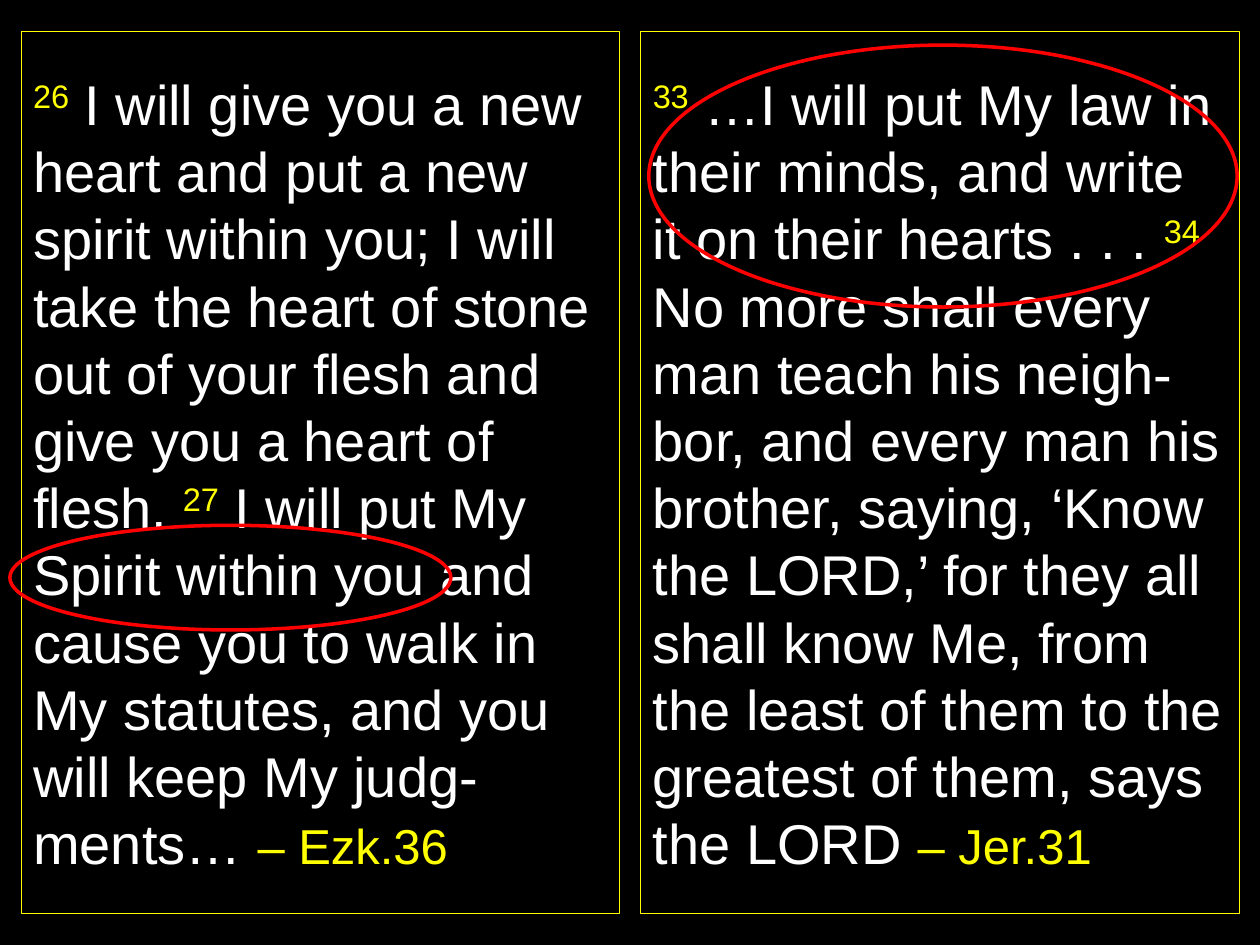
from pptx import Presentation
from pptx.dml.color import RGBColor
from pptx.enum.shapes import MSO_SHAPE
from pptx.enum.text import MSO_ANCHOR, PP_ALIGN
from pptx.util import Cm, Pt

COLORS = {"black": "000000", "white": "FFFFFF", "yellow": "FFFF00", "red": "FF0000"}

FORMATS = {
    "verse": {"size": Pt(32), "color": "yellow", "baseline": 30000},
    "body": {"size": Pt(32), "color": "white"},
    "reference": {"size": Pt(28), "color": "yellow"},
}

PASSAGES = [
    [
        ("verse", "26"),
        ("body", " I will give you a new heart and put a new spirit within you; "
                 "I will take the heart of stone out of your flesh and give you "
                 "a heart of flesh. "),
        ("verse", "27"),
        ("body", " I will put My Spirit within you and cause you to walk in "
                 "My statutes, and you will keep My judg-ments… "),
        ("reference", "– Ezk.36"),
    ],
    [
        ("verse", "33"),
        ("body", " …I will put My law in their minds, and write it on their hearts . . . "),
        ("verse", "34"),
        ("body", " No more shall every man teach his neigh-bor, and every man his "
                 "brother, saying, ‘Know the LORD,’ for they all shall know Me, from "
                 "the least of them to the greatest of them, says the LORD "),
        ("reference", "– Jer.31"),
    ],
]

HIGHLIGHTS = [(0.2, 10.59, 8.89, 2.11), (13.08, 0.91, 11.86, 5.28)]


class ScriptureSlide:
    font_name = "Arial"
    margin, top = 0.42, 0.64
    panel_width, panel_height = 12.07, 17.78

    def __init__(self, presentation):
        self.slide = presentation.slides.add_slide(presentation.slide_layouts[6])
        self.fill(self.slide.background.fill, "black")

    def color(self, name):
        return RGBColor.from_string(COLORS[name])

    def fill(self, fill, name):
        fill.solid()
        fill.fore_color.rgb = self.color(name)

    def outline(self, kind, box, color, width):
        shape = self.slide.shapes.add_shape(kind, *map(Cm, box))
        shape.shadow.inherit = False
        shape.line.color.rgb = self.color(color)
        shape.line.width = Pt(width)
        return shape

    def run(self, paragraph, text, size, color, baseline=None):
        run = paragraph.add_run()
        run.text = text
        for name, value in {"name": self.font_name, "size": size}.items():
            setattr(run.font, name, value)
        run.font.color.rgb = self.color(color)
        if baseline:
            run._r.get_or_add_rPr().set("baseline", str(baseline))

    def panel(self, column, passage):
        left = self.margin + column * (self.panel_width + self.margin)
        box = (left, self.top, self.panel_width, self.panel_height)
        shape = self.outline(MSO_SHAPE.RECTANGLE, box, "yellow", 0.25)
        self.fill(shape.fill, "black")
        frame = shape.text_frame
        for name, value in {"word_wrap": True, "vertical_anchor": MSO_ANCHOR.MIDDLE}.items():
            setattr(frame, name, value)
        paragraph = frame.paragraphs[0]
        paragraph.alignment = PP_ALIGN.LEFT
        for style, text in passage:
            self.run(paragraph, text, **FORMATS[style])

    def highlight(self, box):
        self.outline(MSO_SHAPE.OVAL, box, "red", 2).fill.background()


def main():
    presentation = Presentation()
    presentation.slide_width, presentation.slide_height = Cm(25.4), Cm(19.05)
    scripture = ScriptureSlide(presentation)
    for column, passage in enumerate(PASSAGES):
        scripture.panel(column, passage)
    for box in HIGHLIGHTS:
        scripture.highlight(box)
    presentation.save("out.pptx")


if __name__ == "__main__":
    main()
